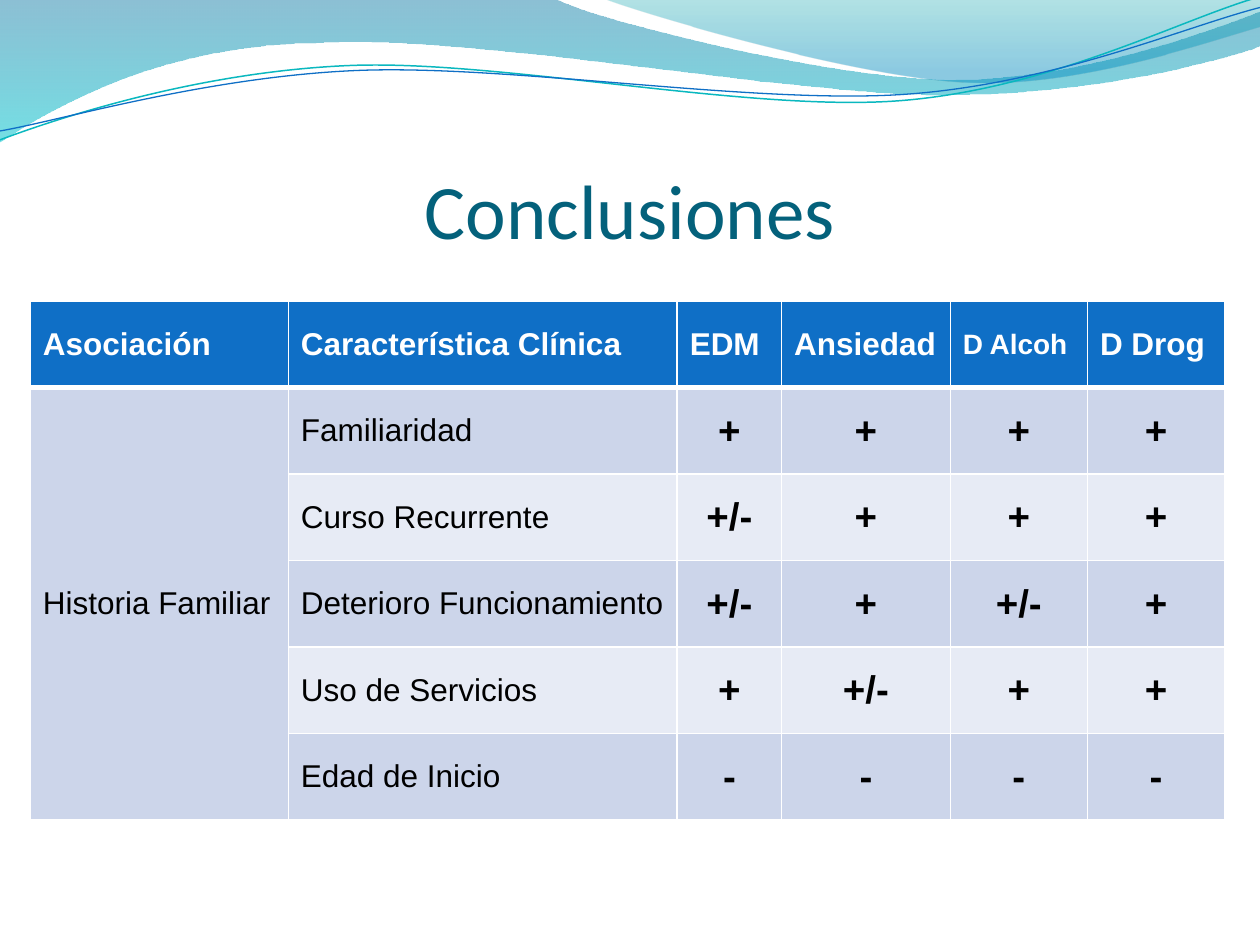
import dataclasses
import math
from typing import Optional

import lxml.etree
import pptx
import pptx.dml.color
import pptx.enum.text
import pptx.oxml.ns
import pptx.util

Inches = pptx.util.Inches
Anchor = pptx.enum.text.MSO_ANCHOR
Align = pptx.enum.text.PP_ALIGN
qn = pptx.oxml.ns.qn

WIDTH, HEIGHT = 10, 7.5
COLORS = {
    "title": "04617B", "header": "0F6FC6", "band": "CCD5EA", "light": "E7EBF5",
    "white": "FFFFFF", "black": "000000", "teal": "0AB8BF",
    "sea": "0074A1", "aqua": "00C6CF", "jade": "00A1A9", "sky": "008BBF",
}


@dataclasses.dataclass
class Stop:
    position: float
    color: str
    opacity: int


@dataclasses.dataclass
class Wave:
    """Points in inches; a step of 2 numbers is a line, one of 6 a Bezier curve."""
    start: tuple
    steps: list
    stops: Optional[list] = None
    line: Optional[str] = None
    weight: float = 0
    center: tuple = (0, 0)
    tilt: float = 0


@dataclasses.dataclass
class Style:
    size: float
    color: str = "black"
    bold: bool = False
    align: Align = Align.LEFT
    font: str = "Arial"


WAVES = [
    Wave((0, -0.01), [
        (4.4, -0.01), (4.76, 0.17, 6.64, 0.63, 7.58, 0.63),
        (8.53, 0.63, 9.58, 0.26, 10, 0.09), (10.01, 0.36),
        (9.83, 0.44, 8.7, 0.76, 7.46, 0.75), (6.22, 0.75, 3.82, 0.28, 2.57, 0.34),
        (1.29, 0.35, 0.46, 0.83, -0.01, 1.13)],
        stops=[Stop(0, "sea", 45), Stop(1, "aqua", 55)]),
    Wave((4.79, -0.01), [
        (5.09, 0.11, 6.82, 0.62, 7.69, 0.65), (8.56, 0.69, 9.61, 0.32, 10, 0.21),
        (10, 0)],
        stops=[Stop(0, "jade", 30), Stop(0.8, "sky", 45)]),
    Wave((0, 1.11), [
        (0.48, 0.93, 1.58, 0.57, 2.77, 0.52), (3.95, 0.47, 5.93, 0.89, 7.13, 0.8),
        (8.33, 0.71, 9.38, 0.15, 9.98, -0.02)],
        line="teal", weight=0.85, center=(4.99, 0.58), tilt=-2.7),
    Wave((0, 1.04), [
        (0.47, 0.96, 1.64, 0.61, 2.83, 0.56), (4.03, 0.51, 5.97, 0.83, 7.17, 0.75),
        (8.36, 0.67, 9.41, 0.21, 10, 0.06)],
        line="header", weight=0.75, center=(5, 0.59), tilt=-2.7),
]

TABLE_WIDTH, TABLE_HEIGHT = 9.48, 4.12
COLUMNS = [2.05, 3.09, 0.83, 1.34, 1.09, 1.09]
ROWS = [
    ["Asociación", "Característica Clínica", "EDM", "Ansiedad", "D Alcoh", "D Drog"],
    ["Historia Familiar", "Familiaridad", "+", "+", "+", "+"],
    ["", "Curso Recurrente", "+/-", "+", "+", "+"],
    ["", "Deterioro Funcionamiento", "+/-", "+", "+/-", "+"],
    ["", "Uso de Servicios", "+", "+/-", "+", "+"],
    ["", "Edad de Inicio", "-", "-", "-", "-"],
]


def rgb(name: str) -> pptx.dml.color.RGBColor:
    return pptx.dml.color.RGBColor.from_string(COLORS[name])


def level(wave: Wave, x: float, y: float) -> tuple:
    """Place a point as it lies before the wave is tilted about its center."""
    angle = math.radians(-wave.tilt)
    dx, dy = x - wave.center[0], y - wave.center[1]
    return (Inches(wave.center[0] + dx * math.cos(angle) - dy * math.sin(angle)),
            Inches(wave.center[1] + dx * math.sin(angle) + dy * math.cos(angle)))


def bend(shape, wave: Wave) -> None:
    """Join each three segments of a curved step into one Bezier curve."""
    segments = iter(list(shape._element.iter(qn("a:lnTo"))))
    for step in wave.steps:
        group = [next(segments) for _ in range(len(step) // 2)]
        if len(group) == 1:
            continue
        curve = lxml.etree.Element(qn("a:cubicBezTo"))
        group[0].addprevious(curve)
        for segment in group:
            curve.append(segment[0])
            segment.getparent().remove(segment)


def draw_wave(page, wave: Wave) -> None:
    points = [level(wave, *step[i:i + 2])
              for step in wave.steps for i in range(0, len(step), 2)]
    builder = page.shapes.build_freeform(*level(wave, *wave.start))
    builder.add_line_segments(points, close=bool(wave.stops))
    shape = builder.convert_to_shape()
    bend(shape, wave)
    shape.rotation = wave.tilt
    shape.shadow.inherit = False
    if not wave.stops:
        shape.fill.background()
        shape.line.color.rgb = rgb(wave.line)
        shape.line.width = pptx.util.Pt(wave.weight)
        return
    shape.line.fill.background()
    shape.fill.gradient()
    shape.fill.gradient_angle = 270
    for target, stop in zip(shape.fill.gradient_stops, wave.stops):
        target.position = stop.position
        target.color.rgb = rgb(stop.color)
    for color, stop in zip(shape._element.spPr.iter(qn("a:srgbClr")), wave.stops):
        alpha = lxml.etree.SubElement(color, qn("a:alpha"))
        alpha.set("val", str(stop.opacity * 1000))


def write(frame, text: str, style: Style) -> None:
    para = frame.paragraphs[0]
    para.alignment = style.align
    span = para.add_run()
    span.text = text
    formats = {"name": style.font, "size": pptx.util.Pt(style.size), "bold": style.bold}
    for name, value in formats.items():
        setattr(span.font, name, value)
    span.font.color.rgb = rgb(style.color)


def draw_title(page, text: str) -> None:
    box = page.shapes.add_textbox(
        Inches(0.05 * WIDTH), Inches(1.29), Inches(0.9 * WIDTH), Inches(0.73))
    formats = {"word_wrap": True, "vertical_anchor": Anchor.BOTTOM, "margin_left": 0,
               "margin_right": 0, "margin_top": Inches(0.05), "margin_bottom": 0}
    for name, value in formats.items():
        setattr(box.text_frame, name, value)
    write(box.text_frame, text, Style(44, "title", align=Align.CENTER, font="Calibri"))


def set_borders(cell, row: int) -> None:
    """White rules, thicker between the header and the body."""
    weights = {"L": 1, "R": 1, "T": 3 if row == 1 else 1, "B": 3 if row == 0 else 1}
    properties = cell._tc.get_or_add_tcPr()
    for side, weight in weights.items():
        line = lxml.etree.SubElement(properties, qn(f"a:ln{side}"))
        line.set("w", str(pptx.util.Pt(weight)))
        fill = lxml.etree.SubElement(line, qn("a:solidFill"))
        lxml.etree.SubElement(fill, qn("a:srgbClr")).set("val", COLORS["white"])


def cell_style(row: int, column: int) -> Style:
    if row == 0:
        return Style(16 if column == 4 else 18, "white", bold=True)
    if column < 2:
        return Style(18)
    return Style(22, bold=True, align=Align.CENTER)


def draw_table(page) -> None:
    table = page.shapes.add_table(
        len(ROWS), len(COLUMNS), Inches(0.24), Inches(2.39),
        Inches(TABLE_WIDTH), Inches(TABLE_HEIGHT)).table
    for column, share in zip(table.columns, COLUMNS):
        column.width = Inches(TABLE_WIDTH * share / sum(COLUMNS))
    for row, texts in enumerate(ROWS):
        table.rows[row].height = Inches(TABLE_HEIGHT / len(ROWS))
        for column, text in enumerate(texts):
            cell = table.cell(row, column)
            cell.vertical_anchor = Anchor.MIDDLE
            set_borders(cell, row)
            cell.fill.solid()
            banded = "band" if row % 2 or column == 0 else "light"
            cell.fill.fore_color.rgb = rgb("header" if row == 0 else banded)
            if text:
                write(cell.text_frame, text, cell_style(row, column))
    table.cell(1, 0).merge(table.cell(len(ROWS) - 1, 0))


def main() -> None:
    deck = pptx.Presentation()
    deck.slide_width, deck.slide_height = Inches(WIDTH), Inches(HEIGHT)
    page = deck.slides.add_slide(deck.slide_layouts[6])
    # Decorative waves along the top
    for wave in WAVES:
        draw_wave(page, wave)
    # Heading and findings
    draw_title(page, "Conclusiones")
    draw_table(page)
    deck.save("out.pptx")


if __name__ == "__main__":
    main()
